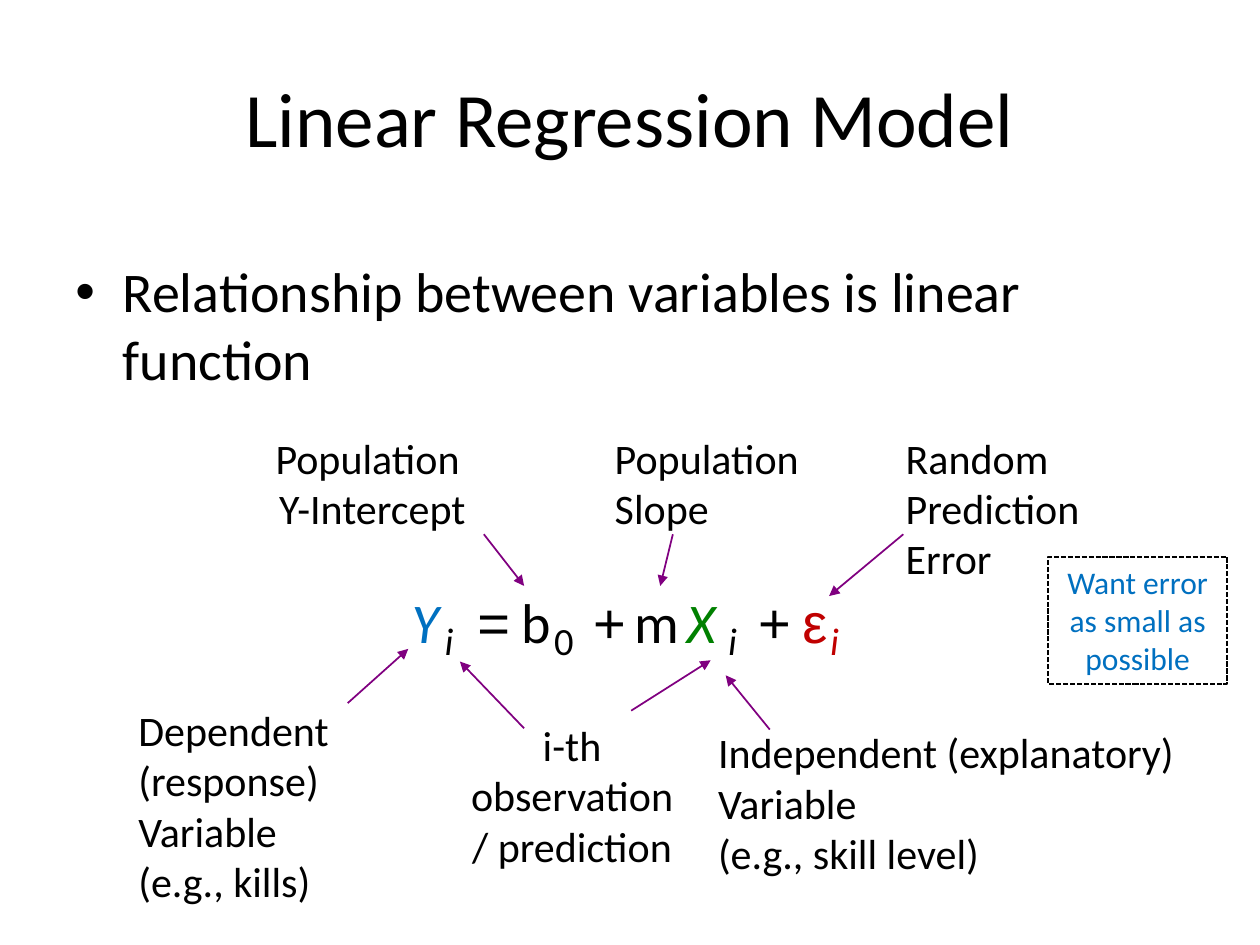
import pptx
import pptx.util
import pptx.dml.color
import pptx.enum.dml
import pptx.enum.shapes
import pptx.enum.text
import pptx.oxml
import pptx.oxml.ns

Pt = pptx.util.Pt
ALIGN = pptx.enum.text.PP_ALIGN
ANCHOR = pptx.enum.text.MSO_ANCHOR
FIT = pptx.enum.text.MSO_AUTO_SIZE

COLORS = {
    "black": "000000",
    "blue": "0070C0",
    "green": "008000",
    "red": "C00000",
    "purple": "800080",
}

# Formula symbols: text, left, width, font, color, italic
TERMS = [
    ("Y", 228.2, 31, "Calibri", "blue", True),
    ("=", 265.7, 32.4, "Arial", "black", False),
    ("b", 290.9, 32.4, "Calibri", "black", False),
    ("+", 331.9, 32.4, "Arial", "black", False),
    ("m", 355.7, 40.3, "Calibri", "black", False),
    ("X", 385.2, 32.4, "Calibri", "green", True),
    ("+", 426.2, 32.4, "Arial", "black", False),
    ("ε", 451.4, 28.8, "Arial", "red", False),
]
# Subscripts: text, left, width, color, italic
SUBS = [
    ("i", 247, 20.2, "black", True),
    ("0", 309.6, 25.9, "black", False),
    ("i", 409, 20.2, "black", True),
    ("i", 467.3, 20.2, "red", True),
]
# Labels: text, box, alignment
LABELS = [
    ("Population \vY-Intercept", (126, 243.4, 173.5, 65.5), ALIGN.CENTER),
    ("Population Slope", (344.2, 243.4, 141.8, 65.5), ALIGN.LEFT),
    ("Random Prediction Error", (510.5, 243.4, 125.3, 94.3), ALIGN.LEFT),
    ("Dependent (response) Variable\v(e.g., kills)",
     (72, 398.9, 173.5, 123), ALIGN.LEFT),
    ("i-th observation / prediction", (258.5, 407.5, 136.8, 94.3), ALIGN.CENTER),
    ("Independent (explanatory) Variable \v(e.g., skill level)",
     (403.2, 411.8, 293.8, 94.3), ALIGN.LEFT),
]
# Arrows from label to symbol: x1, y1, x2, y2
ARROWS = [
    (276.5, 305.3, 299.5, 334.8),
    (384.5, 305.3, 377.3, 334.8),
    (516.2, 305.3, 473.8, 340.6),
    (198.7, 401.8, 233.3, 370.8),
    (360.7, 406.1, 406.1, 377.3),
    (299.5, 416.2, 262.8, 378),
    (439.9, 416.9, 414.7, 385.9),
]


def rgb(name):
    return pptx.dml.color.RGBColor.from_string(COLORS[name])


def write(frame, text, size=24, font="Calibri", color="black", italic=False,
          align=ALIGN.LEFT, anchor=ANCHOR.TOP, wrap=True, fit=FIT.NONE):
    frame.word_wrap = wrap
    frame.auto_size = fit
    frame.vertical_anchor = anchor
    para = frame.paragraphs[0]
    para.text = text
    para.alignment = align
    for run in para.runs:
        run.font.size = Pt(size)
        run.font.name = font
        run.font.italic = italic
        run.font.color.rgb = rgb(color)
    return para


def add_text(slide, text, box, **style):
    shape = slide.shapes.add_textbox(*map(Pt, box))
    return write(shape.text_frame, text, **style)


def add_sign(slide, text, box, **style):
    add_text(slide, text, box, wrap=False, fit=FIT.SHAPE_TO_FIT_TEXT, **style)


def add_bullet(para, indent):
    props = para._p.get_or_add_pPr()
    props.set("marL", str(Pt(indent)))
    props.set("indent", str(-Pt(indent)))
    space = pptx.oxml.ns.nsdecls("a")
    for tag in ('buFont {} typeface="Arial"', 'buChar {} char="•"'):
        props.append(pptx.oxml.parse_xml(f"<a:{tag.format(space)}/>"))


def add_arrow(slide, ends):
    kind = pptx.enum.shapes.MSO_CONNECTOR.STRAIGHT
    arrow = slide.shapes.add_connector(kind, *map(Pt, ends))
    arrow.line.color.rgb = rgb("purple")
    arrow.line.width = Pt(1)
    space = pptx.oxml.ns.nsdecls("a")
    arrow.line._get_or_add_ln().append(
        pptx.oxml.parse_xml(f'<a:tailEnd {space} type="triangle"/>'))
    arrow._element.spPr.append(pptx.oxml.parse_xml(f"<a:effectLst {space}/>"))


def add_note(slide, text, box):
    kind = pptx.enum.shapes.MSO_SHAPE.RECTANGLE
    note = slide.shapes.add_shape(kind, *map(Pt, box))
    note.shadow.inherit = False
    note.fill.background()
    note.line.color.rgb = rgb("black")
    note.line.width = Pt(1)
    note.line.dash_style = pptx.enum.dml.MSO_LINE.SQUARE_DOT
    write(note.text_frame, text, size=18, color="blue", align=ALIGN.CENTER)


def main():
    deck = pptx.Presentation()
    deck.slide_width, deck.slide_height = Pt(720), Pt(540)
    slide = deck.slides.add_slide(deck.slide_layouts[6])

    # Title and bullet
    add_text(slide, "Linear Regression Model", (36, 21.6, 648, 90),
             size=44, align=ALIGN.CENTER, anchor=ANCHOR.MIDDLE)
    point = add_text(slide, "Relationship between variables is linear function",
                     (36, 143.3, 666, 331.9), size=32)
    add_bullet(point, 27)

    # Formula
    for text, left, width, font, color, italic in TERMS:
        add_sign(slide, text, (left, 332, width, 46), size=32,
                 font=font, color=color, italic=italic)
    for text, left, width, color, italic in SUBS:
        add_sign(slide, text, (left, 349.2, width, 33.8), size=22,
                 color=color, italic=italic)

    # Labels with their arrows
    for text, box, align in LABELS:
        add_text(slide, text, box, align=align)
    for ends in ARROWS:
        add_arrow(slide, ends)

    # Remark on the error
    add_note(slide, "Want error as small as possible", (599, 318.2, 102.2, 72.7))

    deck.save("out.pptx")


if __name__ == "__main__":
    main()
